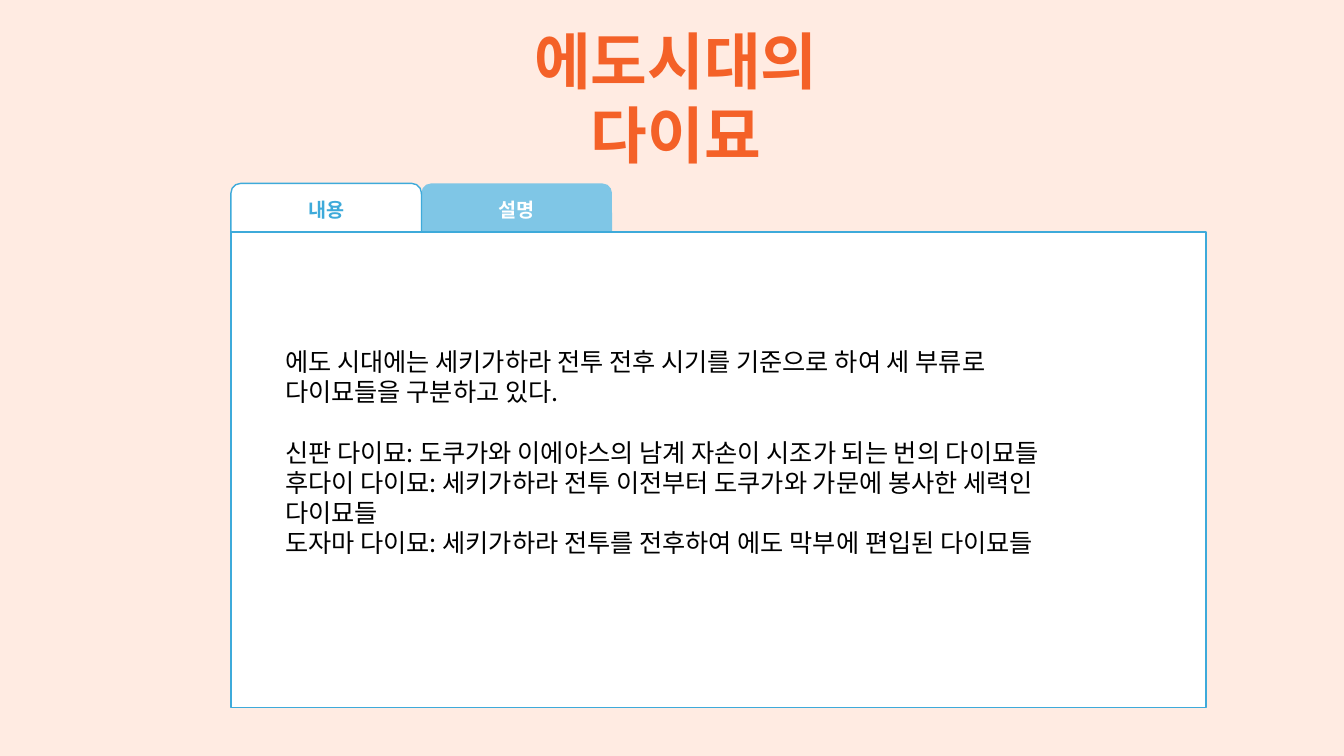
from pptx import Presentation
from pptx.dml.color import RGBColor
from pptx.enum.shapes import MSO_SHAPE as Shape
from pptx.enum.text import MSO_ANCHOR as Anchor, PP_ALIGN as Align
from pptx.util import Inches, Pt

TITLE = "에도시대의 다이묘"
TABS = [("내용", "white", "blue", "blue"), ("설명", "sky", "white", None)]  # text, fill, font, line
BODY = [
    "에도 시대에는 세키가하라 전투 전후 시기를 기준으로 하여 세 부류로 다이묘들을 구분하고 있다.",
    "신판 다이묘: 도쿠가와 이에야스의 남계 자손이 시조가 되는 번의 다이묘들",
    "후다이 다이묘: 세키가하라 전투 이전부터 도쿠가와 가문에 봉사한 세력인 다이묘들",
    "도자마 다이묘: 세키가하라 전투를 전후하여 에도 막부에 편입된 다이묘들",
]
COLORS = {"background": "FFEBE2", "orange": "F46128", "sky": "7FC6E6",
          "blue": "3EAADA", "white": "FFFFFF", "black": "000000"}
FONT = "Noto Sans CJK KR"
PANEL_LEFT, PANEL_TOP = 2.29, 2.3
TAB_TOP, TAB_WIDTH, TAB_HEIGHT = 1.82, 1.89, 0.5


def color(name):
    return RGBColor.from_string(COLORS[name])


def add_box(slide, kind, bounds, fill, line):
    shape = slide.shapes.add_shape(kind, *map(Inches, bounds))
    shape.shadow.inherit = False
    shape.fill.solid()
    shape.fill.fore_color.rgb = color(fill)
    if line:
        shape.line.color.rgb = color(line)
        shape.line.width = Pt(1)
    else:
        shape.line.fill.background()
    return shape


def write(shape, lines, size, font_color, bold, align, anchor):
    frame = shape.text_frame
    frame.word_wrap = True
    frame.vertical_anchor = anchor
    frame.text = "\n".join(lines)
    for paragraph in frame.paragraphs:
        paragraph.alignment = align
        font = paragraph.font
        font.name, font.size, font.bold = FONT, Pt(size), bold
        font.color.rgb = color(font_color)
    return frame


presentation = Presentation()
presentation.slide_width, presentation.slide_height = Inches(13.33), Inches(7.5)
slide = presentation.slides.add_slide(presentation.slide_layouts[6])
slide.background.fill.solid()
slide.background.fill.fore_color.rgb = color("background")

title = slide.shapes.add_textbox(*map(Inches, (4.32, 0.18, 4.77, 1.57)))
write(title, [TITLE], 44, "orange", True, Align.CENTER, Anchor.TOP)

for index, (label, fill, font_color, line) in reversed(list(enumerate(TABS))):
    bounds = (PANEL_LEFT + index * TAB_WIDTH, TAB_TOP, TAB_WIDTH, TAB_HEIGHT)
    tab = add_box(slide, Shape.ROUND_2_SAME_RECTANGLE, bounds, fill, line)
    tab.adjustments[0] = 0.19
    write(tab, [label], 14, font_color, True, Align.CENTER, Anchor.MIDDLE)

add_box(slide, Shape.RECTANGLE, (PANEL_LEFT, PANEL_TOP, 9.67, 4.72), "white", "blue")
body = slide.shapes.add_textbox(*map(Inches, (2.73, 3.12, 7.93, 2.73)))
frame = write(body, BODY, 18, "black", False, Align.LEFT, Anchor.MIDDLE)
frame.paragraphs[1].space_before = Pt(21.6)

presentation.save("out.pptx")
